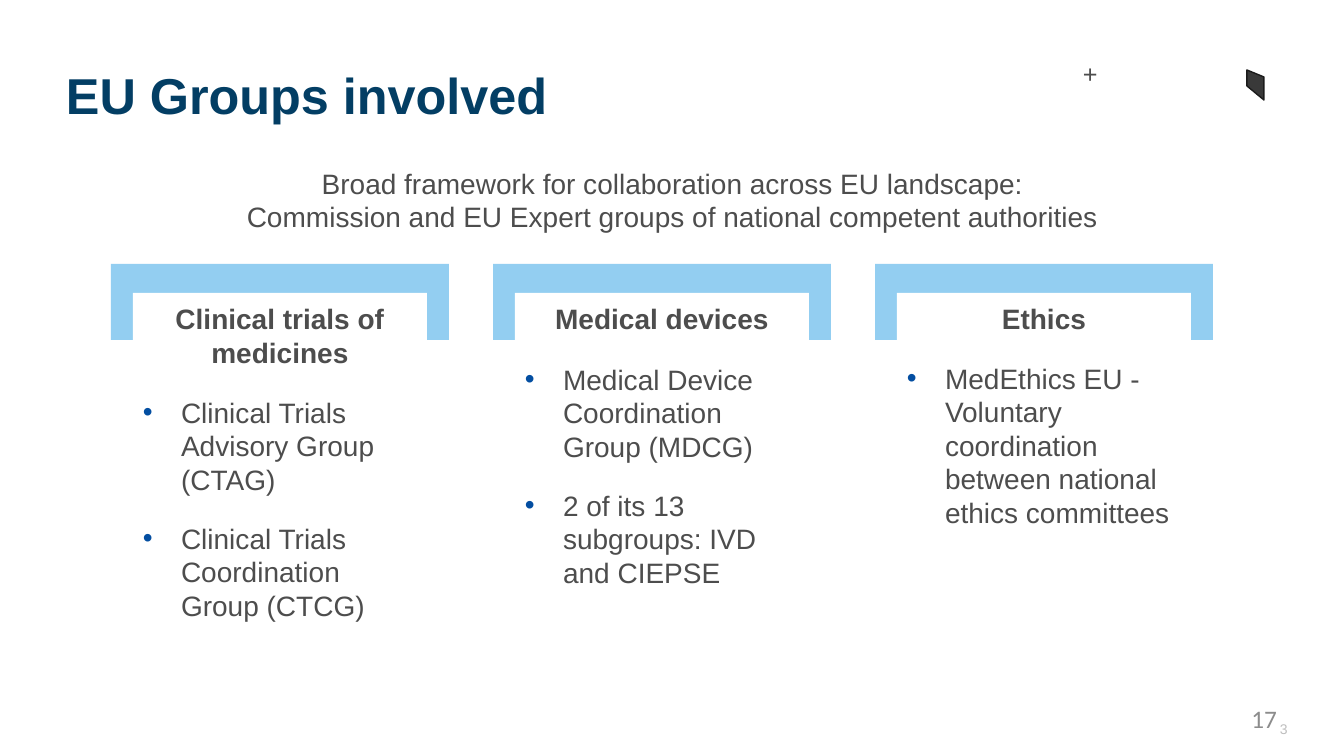
from lxml.etree import SubElement
from pptx import Presentation
from pptx.dml.color import RGBColor
from pptx.enum.shapes import MSO_SHAPE
from pptx.enum.text import MSO_ANCHOR as Anchor, MSO_AUTO_SIZE as Fit, PP_ALIGN as Align
from pptx.oxml.ns import qn
from pptx.util import Emu, Pt

SCALE = 914400 / 100.8
COLORS = {
    "title": "033E64",
    "text": "4D4D4D",
    "bullet": "034EA1",
    "bar": "93CEF1",
    "white": "FFFFFF",
    "mark": "393939",
    "edge": "1B1B1B",
    "page": "8C8C8C",
    "small": "BEBEBE",
}
GROUPS = [
    ("Clinical trials of medicines", 1, 395,
     ["Clinical Trials Advisory Group (CTAG)",
      "Clinical Trials Coordination Group (CTCG)"]),
    ("Medical devices", 2, 362,
     ["Medical Device Coordination Group (MDCG)",
      "2 of its 13 subgroups: IVD and CIEPSE"]),
    ("Ethics", 4, 361,
     ["MedEthics EU - Voluntary coordination between national ethics committees"]),
]


def px(num):
    return Emu(round(num * SCALE))


def rgb(name):
    return RGBColor.from_string(COLORS[name])


class Board:
    """Holds the text style and the slide being built."""

    def __init__(self, slide, font="Arial", size=20):
        self.slide, self.shapes = slide, slide.shapes
        self.font, self.size = font, size

    def rect(self, x, y, w, h, color):
        box = self.shapes.add_shape(MSO_SHAPE.RECTANGLE, px(x), px(y), px(w), px(h))
        box.shadow.inherit = False
        box.fill.solid()
        box.fill.fore_color.rgb = rgb(color)
        box.line.fill.background()

    def poly(self, points, fill, edge):
        form = self.shapes.build_freeform(*points[0], scale=SCALE)
        form.add_line_segments(points[1:], close=True)
        shape = form.convert_to_shape()
        shape.shadow.inherit = False
        shape.fill.solid()
        shape.fill.fore_color.rgb = rgb(fill)
        shape.line.color.rgb = rgb(edge)
        shape.line.width = Pt(1)

    def holder(self, idx, x, y, w, h):
        """Move a placeholder into place and in front of what is drawn so far."""
        spot = self.slide.placeholders[idx]
        spot.left, spot.top, spot.width, spot.height = map(px, (x, y, w, h))
        spot.element.getparent().append(spot.element)
        return spot

    def label(self, x, y, w, h, lines, **style):
        box = self.shapes.add_textbox(px(x), px(y), px(w), px(h))
        self.words(box, lines, **style)

    def words(self, shape, lines, size=None, color="text", bold=False,
              align=Align.LEFT, font=None, bullet=False, gap=0):
        """Set the lines as styled paragraphs in a shape."""
        size = size or self.size
        frame = shape.text_frame
        frame.word_wrap, frame.auto_size = True, Fit.NONE
        frame.vertical_anchor = Anchor.TOP
        frame.margin_left = frame.margin_right = 0
        frame.margin_top = frame.margin_bottom = 0
        for num, line in enumerate(lines):
            para = frame.add_paragraph() if num else frame.paragraphs[0]
            if bullet:
                self.dot(para)
            para.alignment = align
            para.line_spacing = Pt(size * 1.2)
            para.space_before = Pt(gap if num else 0)
            run = para.add_run()
            run.text = line
            run.font.name = font or self.font
            run.font.size = Pt(size)
            run.font.bold = bold
            run.font.color.rgb = rgb(color)

    def dot(self, para):
        """Give a paragraph a hanging coloured bullet."""
        props = para._p.get_or_add_pPr()
        props.set("marL", str(px(39)))
        props.set("indent", str(-px(38)))
        tint = SubElement(props, qn("a:buClr"))
        SubElement(tint, qn("a:srgbClr"), val=COLORS["bullet"])
        SubElement(props, qn("a:buFont"), typeface=self.font)
        SubElement(props, qn("a:buChar"), char="•")


def main():
    deck = Presentation()
    deck.slide_width, deck.slide_height = px(1344), px(756)
    board = Board(deck.slides.add_slide(deck.slide_layouts[4]))

    title = board.holder(0, 66, 64, 990, 62)
    board.words(title, ["EU Groups involved"], size=36, color="title", bold=True)
    intro = board.holder(3, 246, 166, 853, 70)
    board.words(intro, ["Broad framework for collaboration across EU landscape:",
                        "Commission and EU Expert groups of national competent authorities"],
                align=Align.CENTER)

    for col, (head, idx, top, items) in enumerate(GROUPS):
        left = 111 + 382 * col
        board.rect(left, 264, 338, 76, "bar")
        board.rect(left + 22, 293, 294, 168, "white")
        board.label(left + 22, 302, 294, 70, [head], bold=True, align=Align.CENTER)
        body = board.holder(idx, left + 31, top, 271, 235)
        board.words(body, items, bullet=True, gap=18)

    board.poly([(1247, 70), (1247, 86), (1264, 100), (1264, 77)], "mark", "edge")
    board.label(1083, 58, 18, 32, ["+"], size=18)
    board.label(968, 703, 309, 38, ["17"], size=18, color="page",
                align=Align.RIGHT, font="Calibri")
    board.label(1280, 721, 12, 18, ["3"], size=10, color="small")
    deck.save("out.pptx")


if __name__ == "__main__":
    main()
